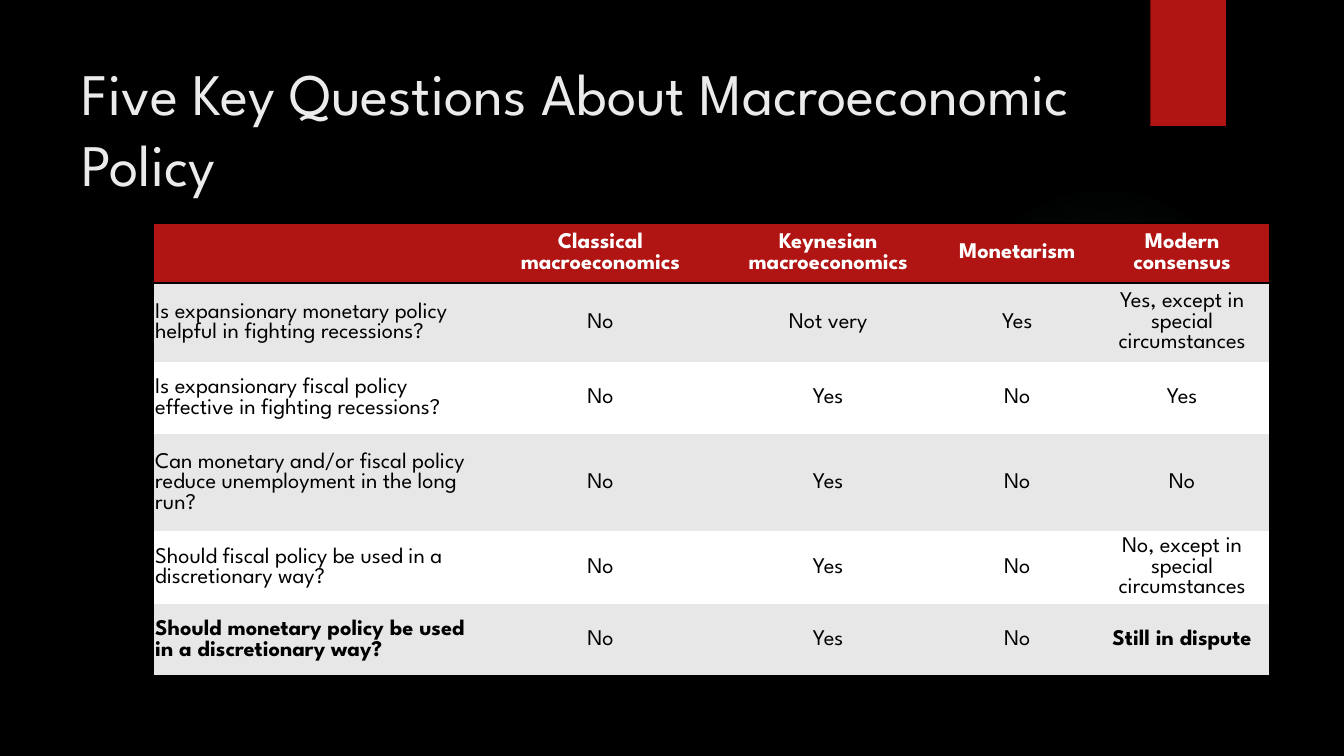
from lxml import etree
from pptx import Presentation
from pptx.dml.color import RGBColor
from pptx.enum.shapes import MSO_SHAPE
from pptx.enum.text import MSO_ANCHOR, PP_ALIGN
from pptx.oxml import parse_xml
from pptx.oxml.ns import qn
from pptx.util import Inches, Pt

RECTANGLE, OVAL = MSO_SHAPE.RECTANGLE, MSO_SHAPE.OVAL
MIDDLE = MSO_ANCHOR.MIDDLE
LEFT, CENTER = PP_ALIGN.LEFT, PP_ALIGN.CENTER
DRAWING_NS = "http://schemas.openxmlformats.org/drawingml/2006/main"
PLAIN_TABLE_STYLE = "{2D5ABB26-0587-4C30-8999-92F81FD0307C}"

FONT = "League Spartan"
COLORS = {
    "black": "000000",
    "white": "FFFFFF",
    "title": "EBEBEB",
    "red": "B01513",
    "band": "E7E7E7",
    "glow": "50B9C1",
}

COLUMN_WIDTHS = [3.27, 2.31, 2.21, 1.54, 1.73]
ROW_HEIGHTS = [0.6, 0.78, 0.72, 0.96, 0.72, 0.72]
ANSWERS = [
    ["", "Classical macroeconomics", "Keynesian macroeconomics", "Monetarism",
     "Modern consensus"],
    ["Is expansionary monetary policy helpful in fighting recessions?",
     "No", "Not very", "Yes", "Yes, except in special circumstances"],
    ["Is expansionary fiscal policy effective in fighting recessions?",
     "No", "Yes", "No", "Yes"],
    ["Can monetary and/or fiscal policy reduce unemployment in the long run?",
     "No", "Yes", "No", "No"],
    ["Should fiscal policy be used in a discretionary way?",
     "No", "Yes", "No", "No, except in special circumstances"],
    ["Should monetary policy be used in a discretionary way?",
     "No", "Yes", "No", "Still in dispute"],
]


def rgb(name):
    return RGBColor.from_string(COLORS[name])


class Page:
    """The current slide and its style."""

    def __init__(self, deck):
        self.slide = deck.slides.add_slide(deck.slide_layouts[5])
        self.shapes = self.slide.shapes
        background = self.slide.background.fill
        background.solid()
        background.fore_color.rgb = rgb("black")

    def style_font(self, para, size, color, bold=False):
        font = para.font
        font.name, font.size, font.bold = FONT, Pt(size), bold
        font.color.rgb = rgb(color)

    def shape(self, kind, left, top, width, height):
        shape = self.shapes.add_shape(
            kind, Inches(left), Inches(top), Inches(width), Inches(height))
        shape.shadow.inherit = False
        shape.line.fill.background()
        return shape

    def ribbon(self, *place):
        shape = self.shape(RECTANGLE, *place)
        shape.fill.solid()
        shape.fill.fore_color.rgb = rgb("red")

    def glow(self, *place):
        """Faint circle that fades outwards."""
        shape = self.shape(OVAL, *place)
        stops = "".join(
            f'<a:gs pos="{position * 1000}"><a:srgbClr val="{COLORS["glow"]}">'
            f'<a:alpha val="{alpha * 1000}"/></a:srgbClr></a:gs>'
            for position, alpha in [(0, 7), (36, 6), (69, 0)])
        gradient = parse_xml(
            f'<a:gradFill xmlns:a="{DRAWING_NS}"><a:gsLst>{stops}</a:gsLst>'
            '<a:path path="circle"><a:fillToRect l="50000" t="50000" '
            'r="50000" b="50000"/></a:path></a:gradFill>')
        shape.element.spPr.find(qn("a:prstGeom")).addnext(gradient)

    def title(self, text, left, top, width, height):
        title = self.shapes.title
        title.left, title.top = Inches(left), Inches(top)
        title.width, title.height = Inches(width), Inches(height)
        frame = title.text_frame
        frame.text = text
        frame.word_wrap = True
        frame.vertical_anchor = MIDDLE
        para = frame.paragraphs[0]
        para.alignment = LEFT
        para.line_spacing = Pt(50.5)
        self.style_font(para, 42, "title")
        # Bring the title in front of the decoration
        title.element.getparent().append(title.element)

    def border(self, cell, side):
        line = etree.SubElement(
            cell._tc.get_or_add_tcPr(), qn(f"a:ln{side}"), w=str(Pt(2)))
        fill = etree.SubElement(line, qn("a:solidFill"))
        etree.SubElement(fill, qn("a:srgbClr"), val=COLORS["black"])

    def cell(self, cell, text, fill, color, bold, alignment, borders):
        for side in borders:
            self.border(cell, side)
        cell.fill.solid()
        cell.fill.fore_color.rgb = rgb(fill)
        cell.margin_left = cell.margin_right = cell.margin_top = Inches(0.01)
        cell.margin_bottom = 0
        cell.vertical_anchor = MIDDLE
        cell.text = text
        para = cell.text_frame.paragraphs[0]
        para.alignment = alignment
        self.style_font(para, 16, color, bold)

    def table(self, rows, left, top):
        table = self.shapes.add_table(
            len(rows), len(COLUMN_WIDTHS), Inches(left), Inches(top),
            Inches(sum(COLUMN_WIDTHS)), Inches(sum(ROW_HEIGHTS))).table
        table._tbl.tblPr.find(qn("a:tableStyleId")).text = PLAIN_TABLE_STYLE
        for column, width in zip(table.columns, COLUMN_WIDTHS):
            column.width = Inches(width)
        last_row, last_column = len(rows) - 1, len(COLUMN_WIDTHS) - 1
        for r, texts in enumerate(rows):
            table.rows[r].height = Inches(ROW_HEIGHTS[r])
            header, last = r == 0, r == last_row
            fill = "red" if header else "band" if r % 2 else "white"
            borders = "TB" if header else "B" if last else ""
            for c, text in enumerate(texts):
                self.cell(
                    table.cell(r, c), text, fill,
                    color="white" if header else "black",
                    bold=header or (last and c in (0, last_column)),
                    alignment=CENTER if header or c else LEFT,
                    borders=borders)


def main():
    deck = Presentation()
    deck.slide_width, deck.slide_height = Inches(13.33), Inches(7.5)
    page = Page(deck)

    # Decoration
    page.glow(9.41, 1.83, 3.08, 3.08)
    page.ribbon(11.41, 0, 0.75, 1.25)

    # Title and comparison of schools
    page.title("Five Key Questions About Macroeconomic Policy",
               0.71, 0.5, 10.29, 1.53)
    page.table(ANSWERS, 1.53, 2.21)

    deck.save("out.pptx")


if __name__ == "__main__":
    main()
